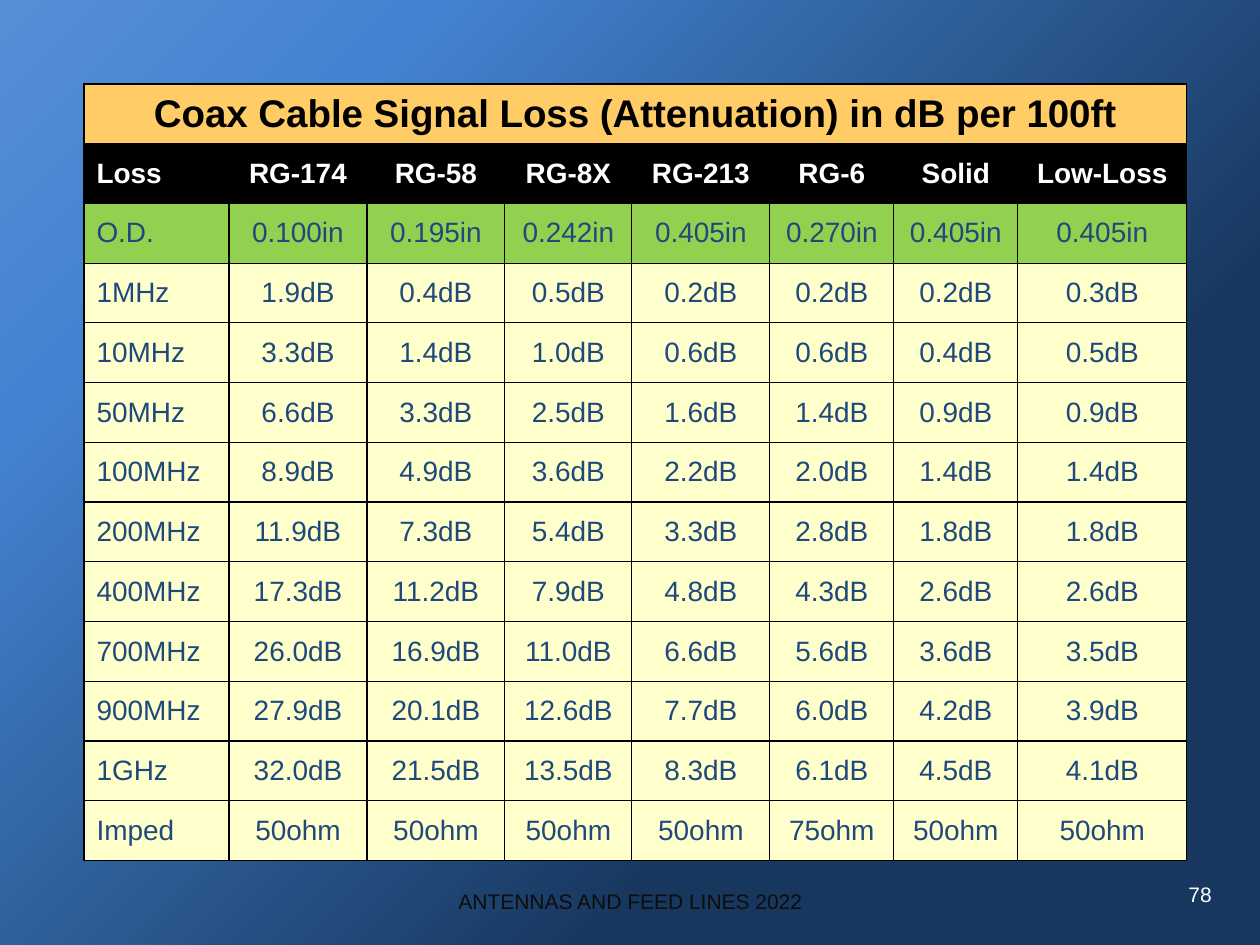
"""Build a slide with a table of coax cable signal loss by frequency."""
from pptx import Presentation, util as u
from pptx.dml import color
from pptx.enum import text
from pptx.oxml import parse_xml
from pptx.oxml.ns import nsdecls

SCALE = 914400 / 126
COLORS = {
    "title": "FFCC66", "header": "000000", "diameter": "92D050", "loss": "FFFFCC",
    "body_text": "1F497D", "black": "000000", "white": "FFFFFF", "footer": "0D0D0D",
    "sky": "558ED5", "blue": "4483D1", "navy": "17375E",
}
TITLE = "Coax Cable Signal Loss (Attenuation) in dB per 100ft"
CABLES = ["Loss", "RG-174", "RG-58", "RG-8X", "RG-213", "RG-6", "Solid", "Low-Loss"]
READINGS = [
    ("O.D.", "in", "0.100 0.195 0.242 0.405 0.270 0.405 0.405"),
    ("1MHz", "dB", "1.9 0.4 0.5 0.2 0.2 0.2 0.3"),
    ("10MHz", "dB", "3.3 1.4 1.0 0.6 0.6 0.4 0.5"),
    ("50MHz", "dB", "6.6 3.3 2.5 1.6 1.4 0.9 0.9"),
    ("100MHz", "dB", "8.9 4.9 3.6 2.2 2.0 1.4 1.4"),
    ("200MHz", "dB", "11.9 7.3 5.4 3.3 2.8 1.8 1.8"),
    ("400MHz", "dB", "17.3 11.2 7.9 4.8 4.3 2.6 2.6"),
    ("700MHz", "dB", "26.0 16.9 11.0 6.6 5.6 3.6 3.5"),
    ("900MHz", "dB", "27.9 20.1 12.6 7.7 6.0 4.2 3.9"),
    ("1GHz", "dB", "32.0 21.5 13.5 8.3 6.1 4.5 4.1"),
    ("Imped", "ohm", "50 50 50 50 75 50 50"),
]
COLUMN_WIDTHS = [145, 138, 138, 127, 138, 124, 124, 169]
TABLE_HEIGHT = 777


def px(length):
    return u.Emu(round(length * SCALE))


def write(text_frame, content, size, ink, bold=False, centered=True):
    text_frame.text = content
    paragraph = text_frame.paragraphs[0]
    paragraph.alignment = text.PP_ALIGN.CENTER if centered else text.PP_ALIGN.LEFT
    font = paragraph.runs[0].font
    font.name, font.size, font.bold = "Arial", u.Pt(size), bold
    font.color.rgb = color.RGBColor.from_string(COLORS[ink])


presentation = Presentation()
presentation.slide_width, presentation.slide_height = px(1260), px(945)
slide = presentation.slides.add_slide(presentation.slide_layouts[6])

stops = "".join(
    f'<a:gs pos="{percent * 1000}"><a:srgbClr val="{COLORS[name]}"/></a:gs>'
    for percent, name in [(0, "sky"), (20, "blue"), (70, "navy")]
)
slide.element.cSld.insert(0, parse_xml(
    f'<p:bg {nsdecls("p", "a")}><p:bgPr><a:gradFill rotWithShape="1">'
    f'<a:gsLst>{stops}</a:gsLst><a:lin ang="2700000" scaled="0"/>'
    "</a:gradFill><a:effectLst/></p:bgPr></p:bg>"
))

rows = [[TITLE] + [""] * (len(CABLES) - 1), CABLES]
rows += [[label] + [value + unit for value in values.split()] for label, unit, values in READINGS]
row_styles = [("title", 22, "black", True), ("header", 16, "white", True),
              ("diameter", 16, "body_text", False)]
row_styles += [("loss", 16, "body_text", False)] * (len(rows) - len(row_styles))

table = slide.shapes.add_table(
    len(rows), len(CABLES), px(84), px(84), px(sum(COLUMN_WIDTHS)), px(TABLE_HEIGHT)
).table
for column, width in zip(table.columns, COLUMN_WIDTHS):
    column.width = px(width)
for row in table.rows:
    row.height = px(TABLE_HEIGHT / len(rows))

for row_index, (contents, (fill, size, ink, bold)) in enumerate(zip(rows, row_styles)):
    for column_index, content in enumerate(contents):
        cell = table.cell(row_index, column_index)
        cell.vertical_anchor = text.MSO_ANCHOR.MIDDLE
        properties = cell._tc.get_or_add_tcPr()
        for side in "LRTB":
            properties.append(parse_xml(
                f'<a:ln{side} {nsdecls("a")} w="9525"><a:solidFill>'
                f'<a:srgbClr val="{COLORS["black"]}"/></a:solidFill></a:ln{side}>'
            ))
        cell.fill.solid()
        cell.fill.fore_color.rgb = color.RGBColor.from_string(COLORS[fill])
        if content:
            centered = row_index == 0 or column_index > 0
            write(cell.text_frame, content, size, ink, bold, centered)
table.cell(0, 0).merge(table.cell(0, len(CABLES) - 1))

for content, left, top, width, height, ink, centered in [
    ("78", 1176, 861, 63, 66, "white", False),
    ("ANTENNAS AND FEED LINES 2022", 431, 876, 399, 50, "footer", True),
]:
    text_frame = slide.shapes.add_textbox(px(left), px(top), px(width), px(height)).text_frame
    text_frame.word_wrap = True
    text_frame.vertical_anchor = text.MSO_ANCHOR.MIDDLE
    write(text_frame, content, 12, ink, centered=centered)

presentation.save("out.pptx")
